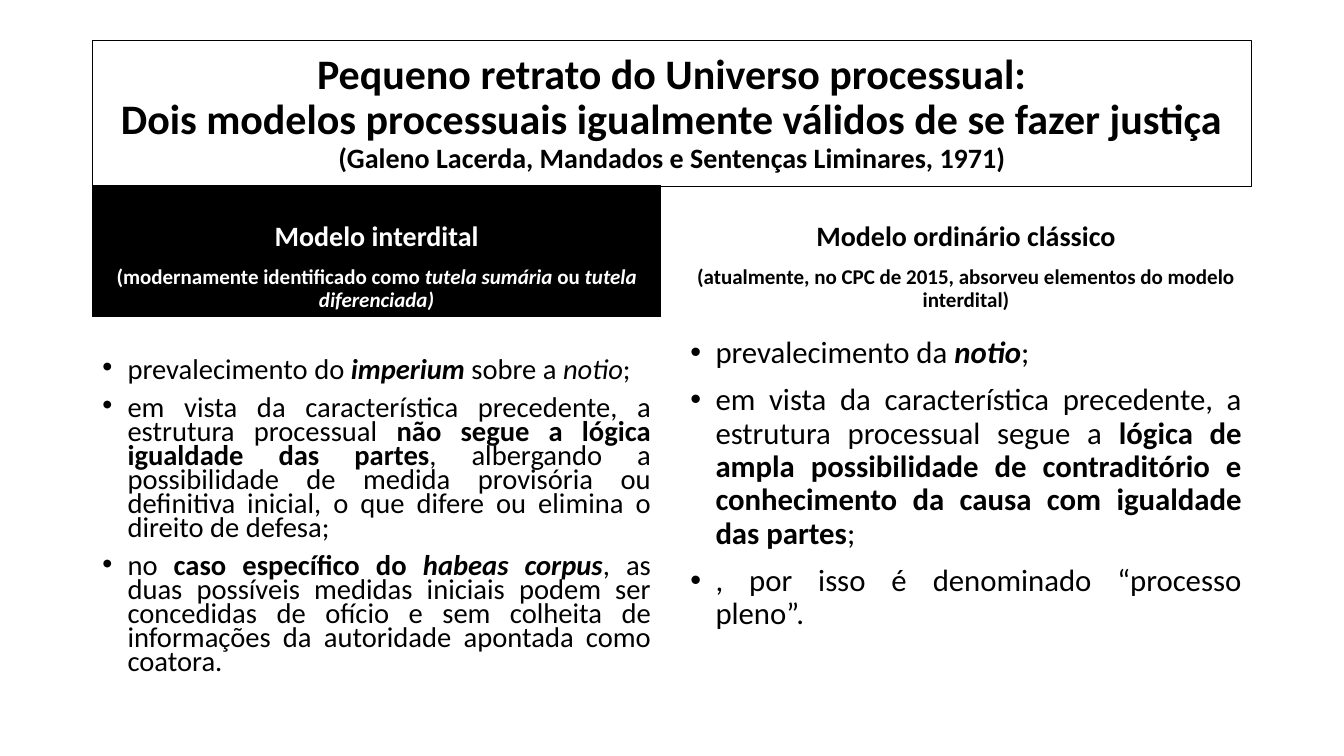
from lxml import etree
from pptx import Presentation
from pptx import util as u
from pptx.dml.color import RGBColor
from pptx.enum import shapes, text
from pptx.oxml import ns

BLACK = RGBColor(0, 0, 0)
WHITE = RGBColor(255, 255, 255)
FONT = "Calibri"
BOLD = {"bold": True}
ITALIC = {"italic": True}
BOLD_ITALIC = {"bold": True, "italic": True}

LEFT, RIGHT = 66, 894
TITLE_TOP, TITLE_HEIGHT = 29, 104.4
HEADER_TOP, HEADER_HEIGHT = 132.6, 93.6
BODY_TOP, BODY_HEIGHT = 197.3, 290

COLUMNS = [
    {
        "left": LEFT, "width": 406, "fill": BLACK, "color": WHITE,
        "header": "Modelo interdital",
        "subtitle": [("(modernamente identificado como ", BOLD), ("tutela sumária", BOLD_ITALIC),
                     (" ou ", BOLD), ("tutela diferenciada)", BOLD_ITALIC)],
        "size": 20.4, "spacing": 0.7, "margin_top": 60,
        "points": [
            [("prevalecimento do ", {}), ("imperium ", BOLD_ITALIC), ("sobre a ", {}),
             ("notio", ITALIC), (";", {})],
            [("em vista da característica precedente, a estrutura processual ", {}),
             ("não segue a lógica igualdade das partes", BOLD),
             (", albergando a possibilidade de medida provisória ou definitiva inicial, "
              "o que difere ou elimina o direito de defesa;", {})],
            [("no ", {}), ("caso específico do ", BOLD), ("habeas corpus", BOLD_ITALIC),
             (", as duas possíveis medidas iniciais podem ser concedidas de ofício e sem "
              "colheita de informações da autoridade apontada como coatora.", {})],
        ],
    },
    {
        "left": 486, "width": RIGHT - 486, "fill": None, "color": BLACK,
        "header": "Modelo ordinário clássico",
        "subtitle": [("(atualmente, no CPC de 2015, absorveu elementos do modelo interdital)", BOLD)],
        "size": 22, "spacing": 0.9, "margin_top": 43.5,
        "points": [
            [("prevalecimento da ", {}), ("notio", BOLD_ITALIC), (";", {})],
            [("em vista da característica precedente, a estrutura processual segue a ", {}),
             ("lógica de ampla possibilidade de contraditório e conhecimento da causa "
              "com igualdade das partes", BOLD), (";", {})],
            [(", por isso é denominado “processo pleno”.", {})],
        ],
    },
]


def set_values(target, values):
    """Set each named attribute of the target."""
    for name, value in values.items():
        setattr(target, name, value)


def add_runs(paragraph, runs, size, color):
    """Add runs given as pairs of wording and font values."""
    for wording, values in runs:
        run = paragraph.add_run()
        run.text = wording
        set_values(run.font, {"name": FONT, "size": u.Pt(size), "bold": False, "italic": False, **values})
        run.font.color.rgb = color


def add_bullet(paragraph):
    """Give the paragraph a hanging round bullet."""
    properties = paragraph._p.get_or_add_pPr()
    properties.set("marL", str(u.Pt(18)))
    properties.set("indent", str(u.Pt(-18)))
    etree.SubElement(properties, ns.qn("a:buFont"), typeface="Arial")
    etree.SubElement(properties, ns.qn("a:buChar"), char="•")


def next_paragraph(frame, index, values):
    """Return the paragraph at the index, spaced from the one before."""
    paragraph = frame.add_paragraph() if index else frame.paragraphs[0]
    set_values(paragraph, {"space_before": u.Pt(10 if index else 0), **values})
    return paragraph


def outline(shape, fill):
    """Fill the shape and give it a black outline."""
    shape.fill.solid()
    shape.fill.fore_color.rgb = fill
    shape.line.color.rgb = BLACK
    shape.line.width = u.Pt(1)


def build_title(slide, left, top, width, height):
    """Place the framed title in the given box."""
    title = slide.shapes.title
    set_values(title, {"left": u.Pt(left), "top": u.Pt(top), "width": u.Pt(width), "height": u.Pt(height)})
    outline(title, WHITE)
    frame = title.text_frame
    set_values(frame, {"word_wrap": True, "auto_size": text.MSO_AUTO_SIZE.NONE,
                       "vertical_anchor": text.MSO_ANCHOR.MIDDLE})
    paragraph = frame.paragraphs[0]
    set_values(paragraph, {"alignment": text.PP_ALIGN.CENTER, "line_spacing": 0.9})
    lines = [("Pequeno retrato do Universo processual:", 30),
             ("Dois modelos processuais igualmente válidos de se fazer justiça", 30),
             ("(Galeno Lacerda, Mandados e Sentenças Liminares, 1971)", 20)]
    for index, (wording, size) in enumerate(lines):
        if index:
            paragraph.add_line_break()
        add_runs(paragraph, [(wording, BOLD)], size, BLACK)


def build_header(slide, column, left, top, width, height):
    """Place a column heading in the given box."""
    header = slide.shapes.add_shape(shapes.MSO_SHAPE.RECTANGLE, u.Pt(left), u.Pt(top), u.Pt(width), u.Pt(height))
    header.shadow.inherit = False
    if column["fill"] is None:
        header.fill.background()
        header.line.fill.background()
    else:
        outline(header, column["fill"])
    frame = header.text_frame
    set_values(frame, {"word_wrap": True, "vertical_anchor": text.MSO_ANCHOR.BOTTOM})
    rows = [([(column["header"], BOLD)], 20), (column["subtitle"], 15)]
    for index, (runs, size) in enumerate(rows):
        paragraph = next_paragraph(frame, index, {"alignment": text.PP_ALIGN.CENTER, "line_spacing": 0.9})
        add_runs(paragraph, runs, size, column["color"])


def build_points(slide, column, left, top, width, height):
    """Place a column's bulleted points in the given box."""
    box = slide.shapes.add_textbox(u.Pt(left), u.Pt(top), u.Pt(width), u.Pt(height))
    frame = box.text_frame
    set_values(frame, {"word_wrap": True, "margin_top": u.Pt(column["margin_top"])})
    for index, runs in enumerate(column["points"]):
        paragraph = next_paragraph(frame, index, {"alignment": text.PP_ALIGN.JUSTIFY,
                                                  "line_spacing": column["spacing"]})
        add_bullet(paragraph)
        add_runs(paragraph, runs, column["size"], BLACK)


def main():
    """Build and save the presentation."""
    presentation = Presentation()
    set_values(presentation, {"slide_width": u.Pt(960), "slide_height": u.Pt(540)})
    slide = presentation.slides.add_slide(presentation.slide_layouts[5])
    build_title(slide, LEFT, TITLE_TOP, RIGHT - LEFT, TITLE_HEIGHT)
    for column in COLUMNS:
        build_header(slide, column, column["left"], HEADER_TOP, column["width"], HEADER_HEIGHT)
        build_points(slide, column, column["left"], BODY_TOP, column["width"], BODY_HEIGHT)
    presentation.save("out.pptx")


if __name__ == "__main__":
    main()
